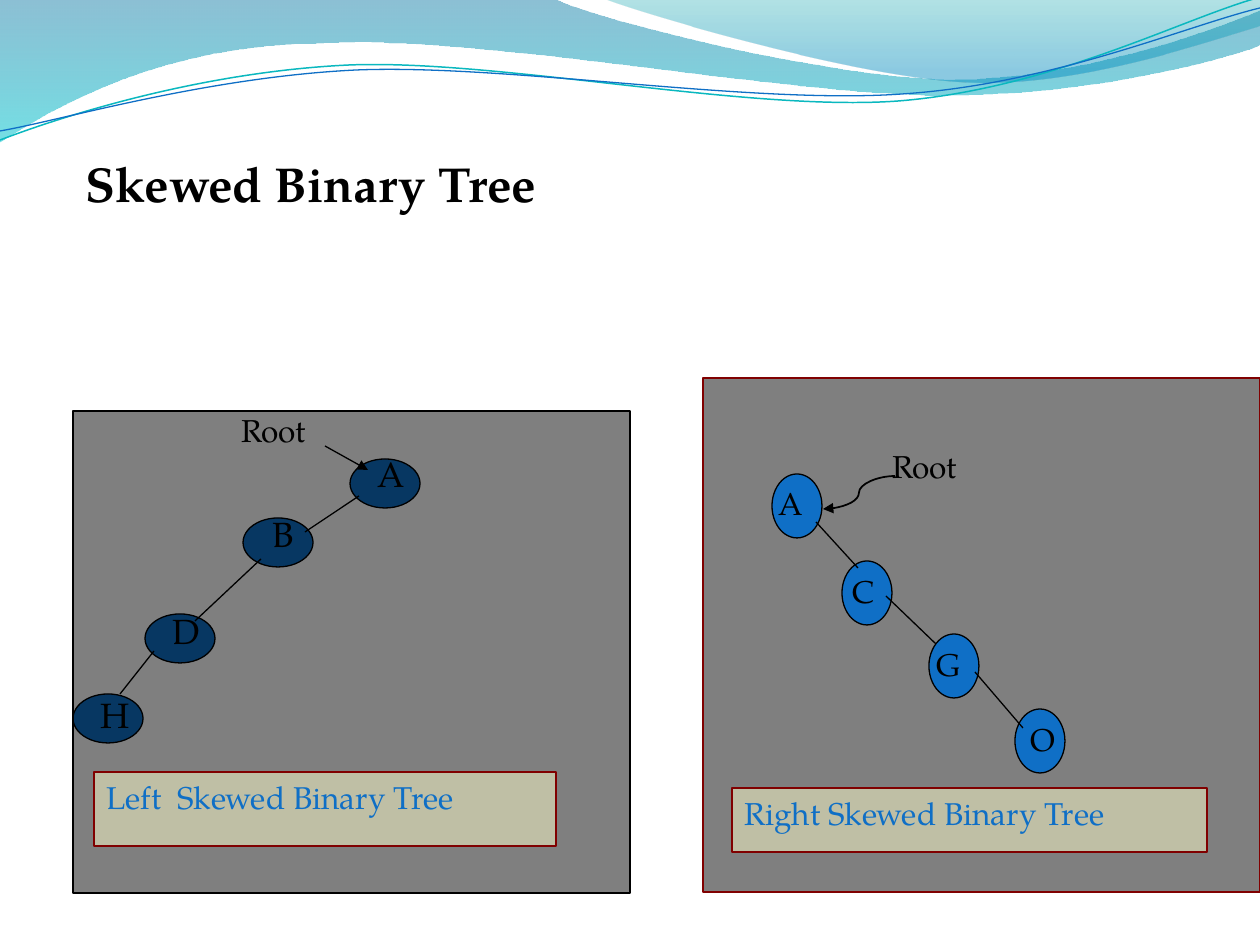
import pptx
import pptx.util
import pptx.dml.color
import pptx.enum.shapes
import pptx.enum.text
import pptx.oxml.ns
import lxml.etree

RGB = pptx.dml.color.RGBColor
BLACK = RGB(0x00, 0x00, 0x00)
BLUE = RGB(0x0F, 0x6F, 0xC6)
TEAL = RGB(0x0A, 0xB8, 0xBF)
MAROON = RGB(0x80, 0x00, 0x00)
CREAM = RGB(0xFF, 0xFF, 0xCC)
DEEP = RGB(0x00, 0x74, 0xA1)
AQUA = RGB(0x00, 0xC6, 0xCF)
SEA = RGB(0x00, 0xA1, 0xA9)
SKY = RGB(0x00, 0x8B, 0xBF)

FONT = "TeX Gyre Pagella"
PX = 914400 / 126  # EMU in one px
KIND = pptx.enum.shapes.MSO_SHAPE
LINK = pptx.enum.shapes.MSO_CONNECTOR
Pt = pptx.util.Pt
qn = pptx.oxml.ns.qn


def place(kind, box, fill, edge, alpha=100):
    shape = shapes.add_shape(kind, *[round(v * PX) for v in box])
    shape.shadow.inherit = False
    shape.fill.solid()
    shape.fill.fore_color.rgb = fill
    shape.line.color.rgb = edge
    shape.line.width = Pt(0.75)
    if alpha < 100:
        color = shape.element.spPr.find(".//" + qn("a:srgbClr"))
        lxml.etree.SubElement(color, qn("a:alpha"), val=str(alpha * 1000))
    return shape


def write(shape, text, size, color=BLACK, bold=False, wrap=False):
    frame = shape.text_frame
    look = {"text": text, "word_wrap": wrap,
            "auto_size": pptx.enum.text.MSO_AUTO_SIZE.NONE,
            "vertical_anchor": pptx.enum.text.MSO_ANCHOR.TOP}
    for key, value in look.items():
        setattr(frame, key, value)
    line = frame.paragraphs[0]
    line.alignment = pptx.enum.text.PP_ALIGN.LEFT
    for key, value in {"name": FONT, "size": Pt(size), "bold": bold}.items():
        setattr(line.font, key, value)
    line.font.color.rgb = color


deck = pptx.Presentation()
deck.slide_width = round(1260 * PX)
deck.slide_height = round(945 * PX)
slide = deck.slides.add_slide(deck.slide_layouts[5])
shapes = slide.shapes

# Title
title = shapes.title
spot = {"left": 73, "top": 147, "width": 770, "height": 72}
for key, value in spot.items():
    setattr(title, key, round(value * PX))
write(title, "Skewed Binary Tree", 28, bold=True, wrap=True)

# Waves: one point makes a straight side, three make a Bezier curve
waves = [
    {"start": (0, -1),
     "parts": [[(554, -1)],
               [(600, 21), (837, 79), (955, 79)],
               [(1074, 79), (1207, 33), (1260, 11)],
               [(1261, 45)],
               [(1239, 55), (1096, 96), (940, 95)],
               [(784, 95), (481, 35), (324, 43)],
               [(163, 44), (58, 105), (-1, 142)]],
     "stops": [(DEEP, 45), (AQUA, 55)], "end": 1.0},
    {"start": (604, -1),
     "parts": [[(641, 14), (859, 78), (969, 82)],
               [(1079, 87), (1211, 40), (1260, 26)],
               [(1260, 0)]],
     "stops": [(SEA, 30), (SKY, 45)], "end": 0.8},
    {"start": (0, 140),
     "parts": [[(60, 117), (199, 72), (349, 65)],
               [(498, 59), (747, 112), (898, 101)],
               [(1050, 89), (1182, 19), (1257, -2)]],
     "line": TEAL, "width": 0.85},
    {"start": (0, 131),
     "parts": [[(59, 121), (207, 77), (357, 70)],
               [(508, 64), (752, 105), (903, 94)],
               [(1053, 84), (1186, 26), (1260, 8)]],
     "line": BLUE, "width": 0.75},
]
for wave in waves:
    path = shapes.build_freeform(*wave["start"], scale=PX)
    dots = [dot for part in wave["parts"] for dot in part]
    path.add_line_segments(dots, close="stops" in wave)
    curve = path.convert_to_shape()
    curve.shadow.inherit = False

    # Turn each run of three sides into one curve
    sides = iter(list(curve.element.spPr.iter(qn("a:lnTo"))))
    for part in wave["parts"]:
        run = [next(sides) for dot in part]
        if len(run) == 3:
            bend = lxml.etree.Element(qn("a:cubicBezTo"))
            run[0].addprevious(bend)
            for side in run:
                bend.append(side[0])
                side.getparent().remove(side)

    if "stops" in wave:
        curve.line.fill.background()
        curve.fill.gradient()
        curve.fill.gradient_angle = 270
        stops = zip(curve.fill.gradient_stops, (0, wave["end"]), wave["stops"])
        for stop, where, (color, alpha) in stops:
            stop.color.rgb = color
            stop.position = where
        tints = curve.element.spPr.iter(qn("a:srgbClr"))
        for tint, (color, alpha) in zip(tints, wave["stops"]):
            lxml.etree.SubElement(tint, qn("a:alpha"), val=str(alpha * 1000))
    else:
        curve.fill.background()
        curve.line.color.rgb = wave["line"]
        curve.line.width = Pt(wave["width"])

# Trees: nodes are (letter, oval x, y, label x, y)
trees = [
    {"panel": (703, 378, 557, 514), "edge": MAROON, "front": False,
     "oval": (50, 64), "size": 18,
     "nodes": [("A", 772, 474, 766, 478), ("C", 842, 561, 840, 566),
               ("G", 929, 634, 924, 639), ("O", 1015, 709, 1018, 714)],
     "links": [(816, 522, 858, 568), (886, 596, 936, 644), (975, 672, 1023, 728)],
     "arrow": (895, 476, 823, 509), "bend": LINK.CURVE, "weight": 1,
     "root": (880, 441, 107, 63),
     "note": (732, 788, 475, 64), "name": "Right Skewed Binary Tree"},
    {"panel": (73, 411, 557, 482), "edge": BLACK, "front": True,
     "oval": (70, 49), "size": 20,
     "nodes": [("A", 350, 459, 365, 446), ("B", 243, 518, 260, 506),
               ("D", 145, 614, 160, 603), ("H", 73, 694, 88, 687)],
     "links": [(359, 496, 305, 532), (261, 559, 195, 621), (154, 651, 120, 694)],
     "arrow": (325, 446, 368, 470), "bend": LINK.STRAIGHT, "weight": 0.75,
     "root": (229, 405, 107, 72),
     "note": (94, 772, 462, 74), "name": "Left  Skewed Binary Tree"},
]
for tree in trees:
    panel = place(KIND.RECTANGLE, tree["panel"], BLACK, tree["edge"], 50)

    # Nodes and labels
    for letter, x, y, *spot in tree["nodes"]:
        place(KIND.OVAL, (x, y, *tree["oval"]), BLUE, BLACK)
    labels = [(letter, (*spot, 55, 63), tree["size"])
              for letter, x, y, *spot in tree["nodes"]]
    labels.append(("Root", tree["root"], 18))
    for text, box, size in labels:
        write(shapes.add_textbox(*[round(v * PX) for v in box]), text, size)

    # Links, then the root arrow
    lines = [(LINK.STRAIGHT, ends, 0.75) for ends in tree["links"]]
    lines.append((tree["bend"], tree["arrow"], tree["weight"]))
    for kind, ends, weight in lines:
        link = shapes.add_connector(kind, *[round(v * PX) for v in ends])
        link.line.color.rgb = BLACK
        link.line.width = Pt(weight)
        lxml.etree.SubElement(link.element.spPr, qn("a:effectLst"))
    stroke = link.element.spPr.find(qn("a:ln"))
    lxml.etree.SubElement(stroke, qn("a:tailEnd"), type="triangle")

    # The left panel veils its tree
    if tree["front"]:
        panel.element.getparent().append(panel.element)
    note = place(KIND.RECTANGLE, tree["note"], CREAM, MAROON, 50)
    write(note, tree["name"], 18, BLUE)

deck.save("out.pptx")
